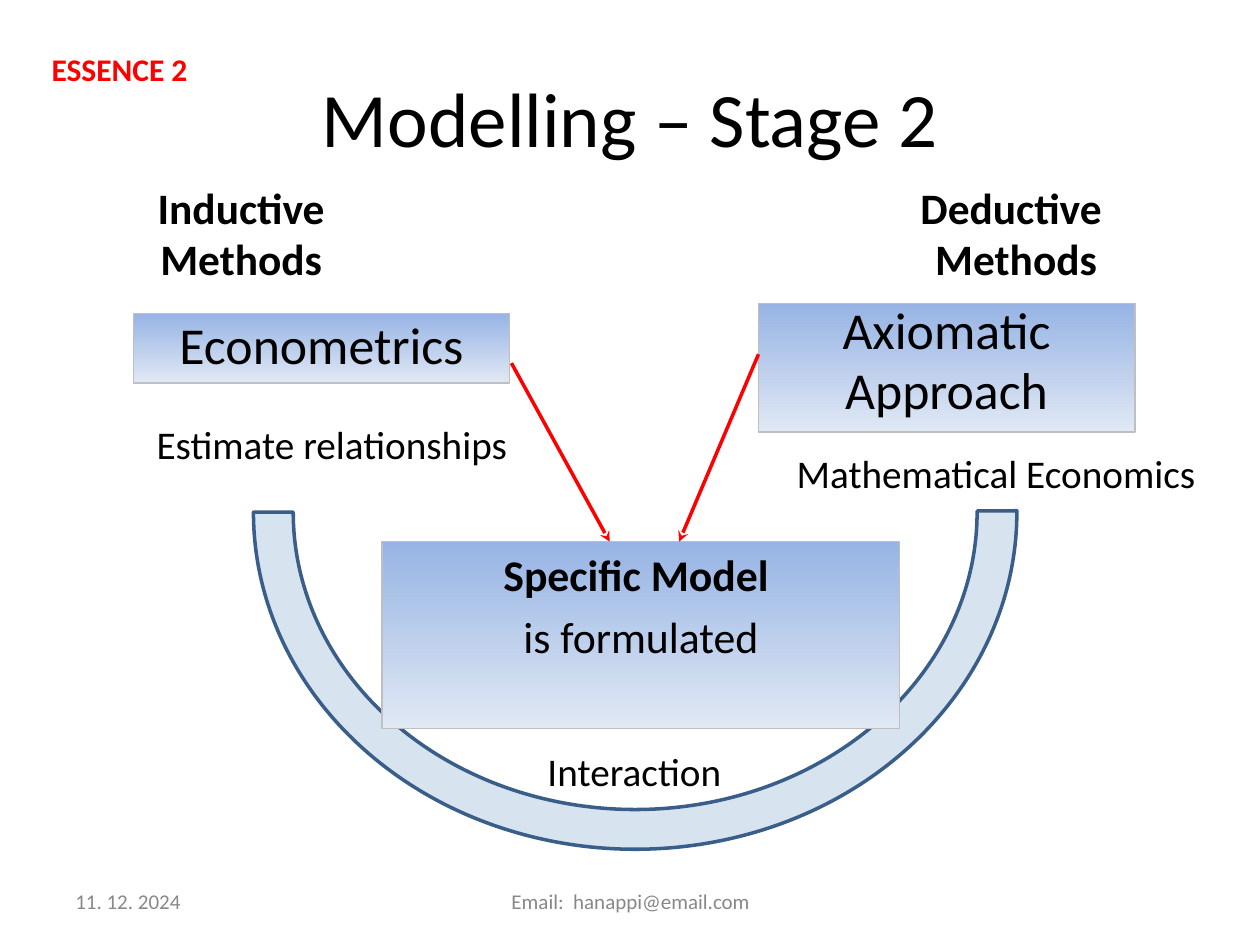
from lxml import etree
from pptx import Presentation
from pptx.dml.color import RGBColor
from pptx.enum import shapes, text
from pptx.oxml import ns
from pptx.util import Cm, Pt

HUES = {"ink": "000000", "red": "FF0000", "gray": "888888", "rim": "BFBFBF",
        "top": "97B4E4", "low": "E0E8F4", "arc": "4F81BD", "edge": "395E89"}

TITLE = ("Modelling – Stage 2", (1.27, 0.76, 22.86, 3.18))
MODEL = (["Specific Model ", "is formulated"], (7.7, 10.92, 10.44, 3.76))
HEADS = [(["Inductive", "Methods"], (1.07, 3.73, 7.59, 2.21)),
         (["Deductive ", "Methods"], (16.69, 3.73, 7.59, 2.21))]
BOXES = [(["Econometrics"], (2.69, 6.32, 7.59, 1.4), 0.9),
         (["Axiomatic", "Approach"], (15.29, 6.12, 7.59, 2.59), 0.8)]
NOTES = [("Mathematical Economics", (15.49, 9.12, 9.19, 0.99)),
         ("Estimate relationships", (2.49, 8.53, 8.41, 0.99)),
         ("Interaction", (10.49, 15.11, 4.6, 0.99))]
FOOT = [("11. 12. 2024", (1.27, 17.65, 5.92, 1.02), "l"),
        ("Email:  hanappi@email.com", (8.69, 17.65, 8.05, 1.02), "ctr")]
TAG = ("ESSENCE 2", (0.79, 0.76, 3.61, 1.24))
LINKS = [(10.31, 7.32, 12.29, 10.92), (15.29, 7.14, 13.69, 10.92)]
ARC = (5.11, 3.53, 15.39, 13.59)
BENDS = (108, 0.128, 0.059)


def tone(name):
    return RGBColor.from_string(HUES[name])


def place(shape, spot):
    shape.left, shape.top, shape.width, shape.height = map(Cm, spot)
    return shape


def write(shape, lines, size=22.4, hue="ink", bold=(False,), side="ctr",
          mid=False, hang=True, lead=1.0, gap=0, pad=0.13):
    frame = shape.text_frame
    frame.word_wrap = True
    frame.auto_size = text.MSO_AUTO_SIZE.NONE
    frame.vertical_anchor = text.MSO_ANCHOR.MIDDLE if mid else text.MSO_ANCHOR.TOP
    frame.margin_left = frame.margin_right = Cm(0.25)
    frame.margin_top = frame.margin_bottom = Cm(pad)
    for i, line in enumerate(lines):
        para = frame.add_paragraph() if i else frame.paragraphs[0]
        para.alignment = text.PP_ALIGN.from_xml(side)
        para.line_spacing, para.space_before = lead, Pt(gap if i else 0)
        props = para._p.get_or_add_pPr()
        if hang:
            props.set("marL", str(Cm(0.95)))
            props.set("indent", str(-Cm(0.95)))
            etree.SubElement(props, ns.qn("a:buNone"))
        run = para.add_run()
        run.text = line
        font = run.font
        font.name, font.size, font.bold = "Calibri", Pt(size), bold[i % len(bold)]
        font.color.rgb = tone(hue)


def shade(shape):
    shape.fill.gradient()
    shape.fill.gradient_angle = 270
    for stop, name, at in zip(shape.fill.gradient_stops, ("top", "low"), (0, 1)):
        stop.color.rgb, stop.position = tone(name), at
    shape.line.color.rgb, shape.line.width = tone("rim"), Pt(0.75)


def label(slide, lines, spot, **form):
    write(slide.shapes.add_textbox(*map(Cm, spot)), lines, **form)


def bend(slide):
    arc = slide.shapes.add_shape(shapes.MSO_SHAPE.BLOCK_ARC, *map(Cm, ARC))
    arc.shadow.inherit = False
    arc.rotation = 180
    arc._element.spPr.xfrm.set("flipH", "1")
    for i, bow in enumerate(BENDS):
        arc.adjustments[i] = bow
    arc.fill.solid()
    arc.fill.fore_color.rgb = tone("arc")
    hue = arc._element.spPr.find(".//" + ns.qn("a:srgbClr"))
    etree.SubElement(hue, ns.qn("a:alpha")).set("val", "22000")
    arc.line.color.rgb, arc.line.width = tone("edge"), Pt(2)
    slide.shapes._spTree.insert(2, arc._element)


def arrow(slide, ends):
    link = slide.shapes.add_connector(shapes.MSO_CONNECTOR.STRAIGHT, *map(Cm, ends))
    link.line.color.rgb, link.line.width = tone("red"), Pt(2)
    tip = etree.SubElement(link.line._get_or_add_ln(), ns.qn("a:tailEnd"))
    tip.set("type", "stealth")
    etree.SubElement(link._element.spPr, ns.qn("a:effectLst"))


def main():
    """Build the modelling slide and save it."""
    deck = Presentation()
    deck.slide_width, deck.slide_height = Cm(25.4), Cm(19.05)
    slide = deck.slides.add_slide(deck.slide_layouts[1])
    head, body = slide.placeholders
    write(place(head, TITLE[1]), [TITLE[0]], size=44, mid=True, hang=False)
    shade(place(body, MODEL[1]))
    write(body, MODEL[0], size=25, bold=(True, False), gap=5)
    bend(slide)
    for lines, spot in HEADS:
        label(slide, lines, spot, size=24.8, bold=(True,), lead=0.8, gap=5)
    for lines, spot, lead in BOXES:
        box = slide.shapes.add_shape(shapes.MSO_SHAPE.RECTANGLE, *map(Cm, spot))
        box.shadow.inherit = False
        shade(box)
        write(box, lines, size=29.6, lead=lead, gap=5.9)
    for ends in LINKS:
        arrow(slide, ends)
    for line, spot, side in FOOT:
        label(slide, [line], spot, size=12, hue="gray", side=side, mid=True, hang=False)
    for line, spot in NOTES:
        label(slide, [line], spot, lead=0.8)
    label(slide, [TAG[0]], TAG[1], size=18, hue="red", bold=(True,), side="l",
          hang=False, pad=0.25)
    deck.save("out.pptx")


if __name__ == "__main__":
    main()
